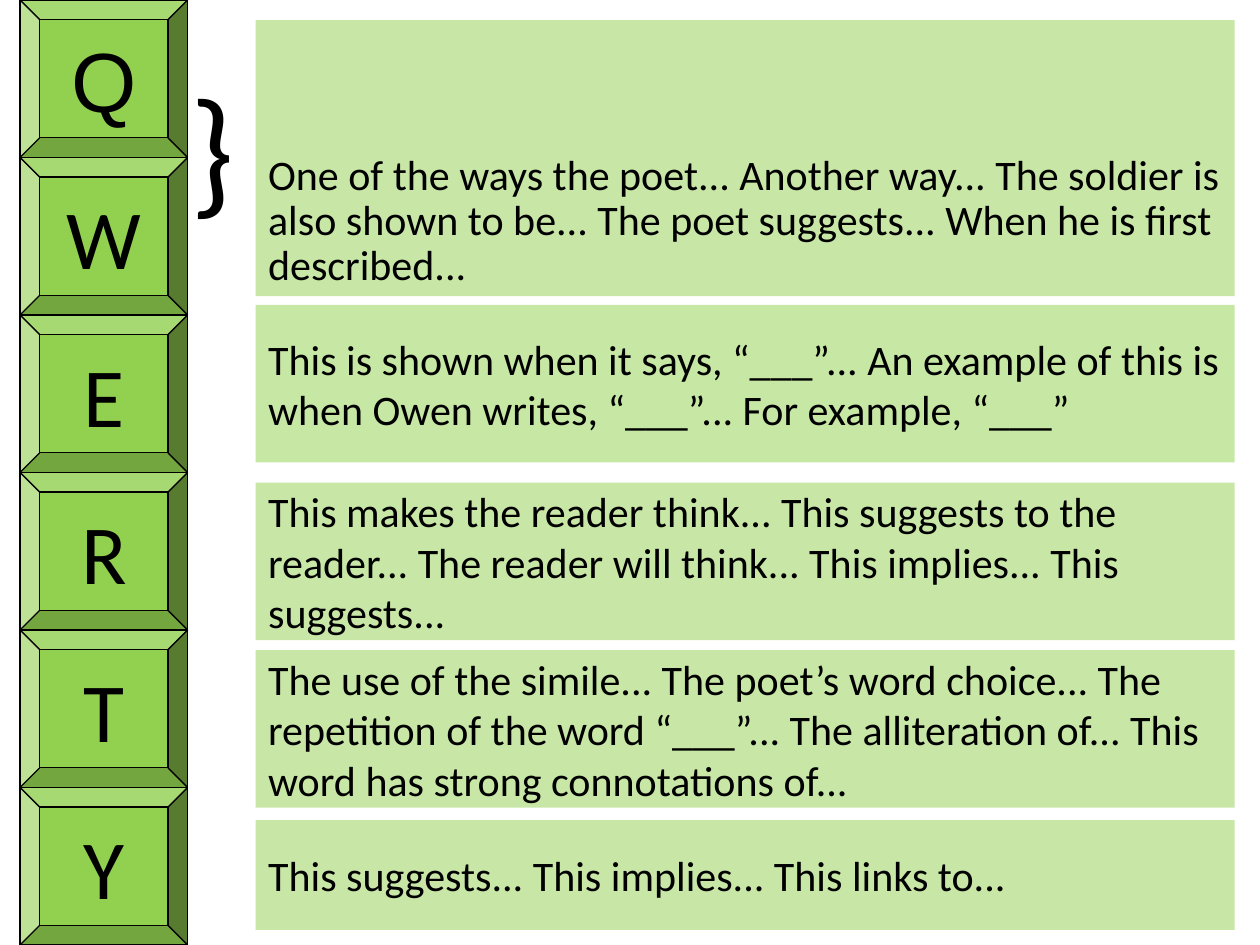
import lxml.etree
import pptx
import pptx.dml.color
import pptx.enum.shapes
import pptx.enum.text
import pptx.oxml.ns
import pptx.util

Inches = pptx.util.Inches
Pt = pptx.util.Pt
SHAPES = pptx.enum.shapes.MSO_SHAPE
ANCHOR = pptx.enum.text.MSO_ANCHOR
ALIGN = pptx.enum.text.PP_ALIGN
GREEN = pptx.dml.color.RGBColor(0x92, 0xD0, 0x50)
BLACK = pptx.dml.color.RGBColor(0x00, 0x00, 0x00)


def write(holder, words, formats):
    frame = holder.text_frame
    frame.text = words
    paragraph = frame.paragraphs[0]
    font = paragraph.runs[0].font
    font.color.rgb = BLACK
    targets = {"frame": frame, "paragraph": paragraph, "font": font}
    for part, values in formats.items():
        for attribute, value in values.items():
            setattr(targets[part], attribute, value)


def add_panel(preset, left, top, width, height):
    panel = slide.shapes.add_shape(
        preset, Inches(left), Inches(top), Inches(width), Inches(height)
    )
    panel.shadow.inherit = False
    panel.fill.solid()
    panel.fill.fore_color.rgb = GREEN
    return panel


presentation = pptx.Presentation()
presentation.slide_width = Inches(10)
presentation.slide_height = Inches(7.5)
slide = presentation.slides.add_slide(presentation.slide_layouts[6])

key_height = 1.25
for row, letter in enumerate("QWERTY"):
    key = add_panel(SHAPES.BEVEL, 0.16, row * key_height, 1.33, key_height)
    key.line.color.rgb = BLACK
    key.line.width = Pt(0.75)
    write(key, letter, {
        "frame": {"vertical_anchor": ANCHOR.MIDDLE, "word_wrap": True},
        "paragraph": {"alignment": ALIGN.CENTER},
        "font": {"name": "Arial" if letter == "Q" else "Calibri", "size": Pt(48)},
    })

brace = slide.shapes.add_textbox(Inches(1.41), Inches(0.43), Inches(0.55), Inches(1.45))
write(brace, "}", {
    "frame": {"word_wrap": True},
    "font": {"name": "Calibri", "size": Pt(80)},
})

sentence_starters = [
    (0.16, 2.19, 50, ANCHOR.BOTTOM, 0.9,
     "One of the ways the poet... Another way... The soldier is also shown to be... "
     "The poet suggests... When he is first described..."),
    (2.42, 1.25, 51, ANCHOR.MIDDLE, 1.0,
     "This is shown when it says, “___”... An example of this is when Owen writes, "
     "“___”... For example, “___”"),
    (3.83, 1.25, 50, ANCHOR.MIDDLE, 1.0,
     "This makes the reader think... This suggests to the reader... "
     "The reader will think... This implies... This suggests..."),
    (5.16, 1.25, 50, ANCHOR.MIDDLE, 1.0,
     "The use of the simile... The poet’s word choice... The repetition of the word "
     "“___”... The alliteration of... This word has strong connotations of..."),
    (6.51, 0.87, 50, ANCHOR.MIDDLE, 1.0,
     "This suggests... This implies... This links to..."),
]
for top, height, opacity, anchor, spacing, words in sentence_starters:
    starter = add_panel(SHAPES.RECTANGLE, 2.03, top, 7.77, height)
    starter.line.fill.background()
    tint = starter.fill._xPr.find(".//" + pptx.oxml.ns.qn("a:srgbClr"))
    alpha = lxml.etree.SubElement(tint, pptx.oxml.ns.qn("a:alpha"))
    alpha.set("val", str(opacity * 1000))
    write(starter, words, {
        "frame": {"vertical_anchor": anchor, "word_wrap": True},
        "paragraph": {"alignment": ALIGN.LEFT, "line_spacing": spacing},
        "font": {"name": "Calibri", "size": Pt(24)},
    })

presentation.save("out.pptx")
